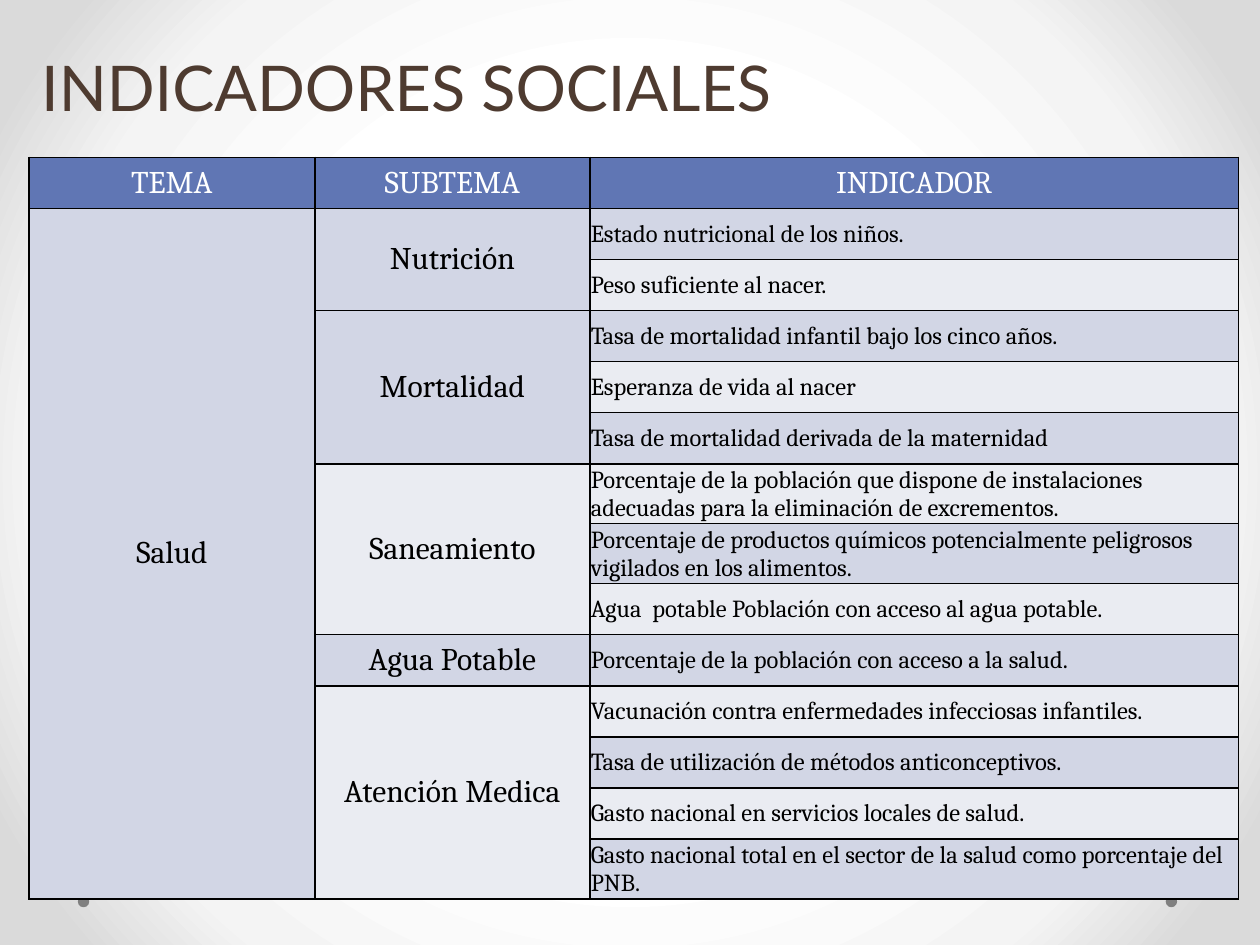
import dataclasses

import pptx
import pptx.dml.color
import pptx.enum.shapes
import pptx.enum.text
import pptx.oxml
import pptx.oxml.ns
import pptx.util

Cm = pptx.util.Cm
Pt = pptx.util.Pt
ALIGN = pptx.enum.text.PP_ALIGN
MIDDLE = pptx.enum.text.MSO_ANCHOR.MIDDLE
NS = pptx.oxml.ns.nsdecls("a")


@dataclasses.dataclass(frozen=True)
class Theme:
    title_font: str = "Lato"
    body_font: str = "Cambria"
    title_size: int = 36
    head_size: int = 18
    body_size: int = 14
    title: str = "4E3B30"
    header: str = "6076B4"
    header_text: str = "FFFFFF"
    text: str = "000000"
    border: str = "000000"
    dot: str = "808080"
    stripes: tuple[str, str] = ("D2D6E5", "EAECF2")
    backdrop: tuple[tuple[int, str], ...] = ((50, "FFFFFF"), (76, "F4F4F4"), (92, "DADADA"))


@dataclasses.dataclass(frozen=True)
class Subtheme:
    name: str
    indicators: tuple[str, ...]


THEME = Theme()
HEADINGS = ("TEMA", "SUBTEMA", "INDICADOR")
TOPIC = "Salud"
COLUMNS = (5.77, 5.54, 13.08)
ROW_HEIGHT = 1.03
SUBTHEMES = (
    Subtheme("Nutrición", (
        "Estado nutricional de los niños.",
        "Peso suficiente al nacer.",
    )),
    Subtheme("Mortalidad", (
        "Tasa de mortalidad infantil bajo los cinco años.",
        "Esperanza de vida al nacer",
        "Tasa de mortalidad derivada de la maternidad",
    )),
    Subtheme("Saneamiento", (
        "Porcentaje de la población que dispone de instalaciones adecuadas "
        "para la eliminación de excrementos.",
        "Porcentaje de productos químicos potencialmente peligrosos vigilados en los alimentos.",
        "Agua  potable Población con acceso al agua potable.",
    )),
    Subtheme("Agua Potable", ("Porcentaje de la población con acceso a la salud.",)),
    Subtheme("Atención Medica", (
        "Vacunación contra enfermedades infecciosas infantiles.",
        "Tasa de utilización de métodos anticonceptivos.",
        "Gasto nacional en servicios locales de salud.",
        "Gasto nacional total en el sector de la salud como porcentaje del PNB.",
    )),
)


def rgb(color: str) -> pptx.dml.color.RGBColor:
    return pptx.dml.color.RGBColor.from_string(color)


def style(p, text: str, font: str, size: int, color: str, align=ALIGN.LEFT) -> None:
    p.text = text
    p.alignment = align
    p.font.name = font
    p.font.size = Pt(size)
    p.font.color.rgb = rgb(color)


def paint_background(s) -> None:
    fill = s.background.fill
    fill.gradient()
    grad = s.element.find(".//" + pptx.oxml.ns.qn("a:gradFill"))
    for child in list(grad):
        grad.remove(child)
    stops = "".join(
        f'<a:gs pos="{pos * 1000}"><a:srgbClr val="{color}"/></a:gs>'
        for pos, color in THEME.backdrop
    )
    grad.append(pptx.oxml.parse_xml(f"<a:gsLst {NS}>{stops}</a:gsLst>"))
    grad.append(pptx.oxml.parse_xml(
        f'<a:path {NS} path="circle">'
        '<a:fillToRect l="50000" t="50000" r="50000" b="50000"/></a:path>'
    ))


def add_dot(s, left: float) -> None:
    sp = s.shapes.add_shape(
        pptx.enum.shapes.MSO_SHAPE.OVAL, Cm(left), Cm(18.06), Cm(0.23), Cm(0.23)
    )
    sp.shadow.inherit = False
    sp.fill.solid()
    sp.fill.fore_color.rgb = rgb(THEME.dot)
    sp.line.fill.background()


def add_title(s, text: str) -> None:
    tf = s.shapes.add_textbox(Cm(0.58), Cm(0.58), Cm(24.13), Cm(2.34)).text_frame
    tf.word_wrap = True
    tf.vertical_anchor = MIDDLE
    style(tf.paragraphs[0], text, THEME.title_font, THEME.title_size, THEME.title)


def format_cell(cell, fill: str) -> None:
    cell.fill.solid()
    cell.fill.fore_color.rgb = rgb(fill)
    cell.vertical_anchor = MIDDLE
    tc_pr = cell._tc.get_or_add_tcPr()
    for i, side in enumerate("LRTB"):
        tc_pr.insert(i, pptx.oxml.parse_xml(
            f'<a:ln{side} {NS} w="{Pt(1)}"><a:solidFill>'
            f'<a:srgbClr val="{THEME.border}"/></a:solidFill></a:ln{side}>'
        ))


def tighten(cell) -> None:
    cell.margin_left = cell.margin_right = cell.margin_top = Cm(0.02)
    cell.margin_bottom = 0


def write_cell(cell, text: str, size: int, color: str, align=ALIGN.CENTER) -> None:
    style(cell.text_frame.paragraphs[0], text, THEME.body_font, size, color, align)


def add_indicator_table(s) -> None:
    count = 1 + sum(len(sub.indicators) for sub in SUBTHEMES)
    table = s.shapes.add_table(
        count, len(COLUMNS), Cm(0.58), Cm(3.17), Cm(sum(COLUMNS)), Cm(count * ROW_HEIGHT)
    ).table
    for column, width in zip(table.columns, COLUMNS):
        column.width = Cm(width)
    for row in table.rows:
        row.height = Cm(ROW_HEIGHT)

    for col, heading in enumerate(HEADINGS):
        cell = table.cell(0, col)
        format_cell(cell, THEME.header)
        tighten(cell)
        write_cell(cell, heading, THEME.head_size, THEME.header_text)

    first = 1
    for sub in SUBTHEMES:
        sub_fill = THEME.stripes[(first - 1) % 2]
        for row, indicator in enumerate(sub.indicators, first):
            fills = (THEME.stripes[0], sub_fill, THEME.stripes[(row - 1) % 2])
            for col, fill in enumerate(fills):
                format_cell(table.cell(row, col), fill)
            cell = table.cell(row, 2)
            tighten(cell)
            write_cell(cell, indicator, THEME.body_size, THEME.text, ALIGN.LEFT)
        last = first + len(sub.indicators) - 1
        if last > first:
            table.cell(first, 1).merge(table.cell(last, 1))
        write_cell(table.cell(first, 1), sub.name, THEME.head_size, THEME.text)
        first = last + 1

    table.cell(1, 0).merge(table.cell(count - 1, 0))
    write_cell(table.cell(1, 0), TOPIC, THEME.head_size, THEME.text)


def main() -> None:
    """Build the social indicators slide."""
    prs = pptx.Presentation()
    prs.slide_width, prs.slide_height = Cm(25.4), Cm(19.05)
    s = prs.slides.add_slide(prs.slide_layouts[6])
    paint_background(s)
    for left in (23.5, 1.57):
        add_dot(s, left)
    add_title(s, "INDICADORES SOCIALES")
    add_indicator_table(s)
    prs.save("out.pptx")


if __name__ == "__main__":
    main()
